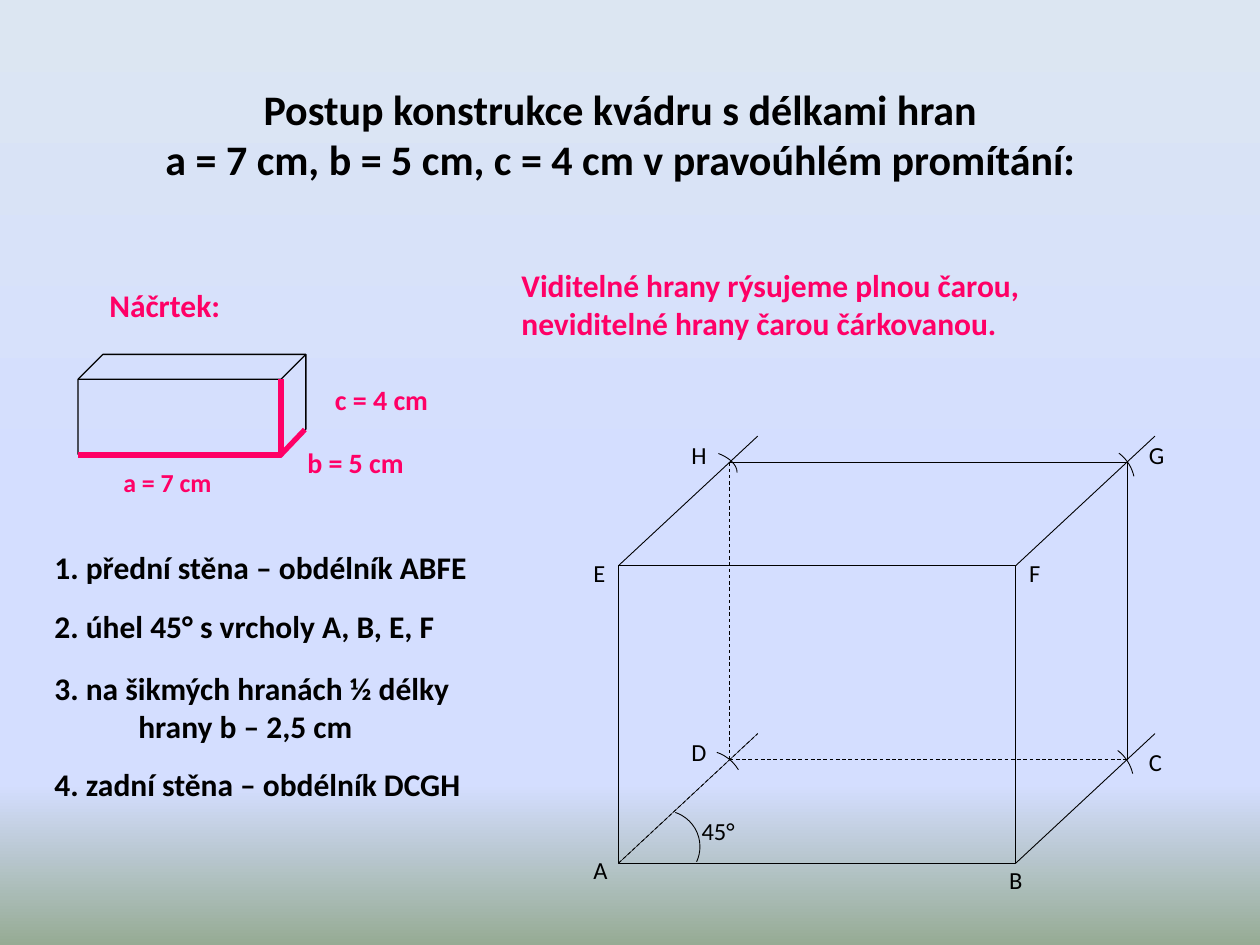
from copy import deepcopy
from pptx import Presentation
from pptx import util as u
from pptx.dml.color import RGBColor
from pptx.enum import dml, shapes, text
from pptx.oxml.ns import qn

Pt = u.Pt
BLACK = RGBColor(0x00, 0x00, 0x00)
PINK = RGBColor(0xFF, 0x00, 0x66)
SKY = RGBColor(0xDC, 0xE6, 0xF2)
LAVENDER = RGBColor(0xD4, 0xDE, 0xFF)
GREEN = RGBColor(0x96, 0xAB, 0x94)

presentation = Presentation()
presentation.slide_width, presentation.slide_height = Pt(720), Pt(540)
slide = presentation.slides.add_slide(presentation.slide_layouts[6])

background = slide.background.fill
background.gradient()
background.gradient_angle = 270
stop_list = slide._element.xpath(".//a:gsLst")[0]
for _ in range(2):
    stop_list.append(deepcopy(stop_list[-1]))
stops = [(0, SKY), (0.53, LAVENDER), (0.83, LAVENDER), (1, GREEN)]
for stop, (position, color) in zip(background.gradient_stops, stops):
    stop.position = position
    stop.color.rgb = color


def add_text(content, left, top, width, height, size, color=BLACK, bold=True):
    box = slide.shapes.add_textbox(Pt(left), Pt(top), Pt(width), Pt(height))
    box.text_frame.word_wrap = True
    box.text_frame.text = content
    for paragraph in box.text_frame.paragraphs:
        for run in paragraph.runs:
            run.font.name = "Calibri"
            run.font.size = Pt(size)
            run.font.bold = bold
            run.font.color.rgb = color
    return box.text_frame


def add_line(x1, y1, x2, y2, width=0.5, color=BLACK, dashed=False):
    line = slide.shapes.add_connector(
        shapes.MSO_CONNECTOR.STRAIGHT, Pt(x1), Pt(y1), Pt(x2), Pt(y2))
    line.line.width = Pt(width)
    line.line.color.rgb = color
    if dashed:
        line.line.dash_style = dml.MSO_LINE.DASH
    properties = line._element.spPr
    properties.append(properties.makeelement(qn("a:effectLst"), {}))


title = add_text("Postup konstrukce kvádru s délkami hran\v"
                 "a = 7 cm, b = 5 cm, c = 4 cm v pravoúhlém promítání:",
                 30.5, 31.5, 648, 90, 24)
title.vertical_anchor = text.MSO_ANCHOR.MIDDLE
title.paragraphs[0].alignment = text.PP_ALIGN.CENTER

steps = [
    ("1. přední stěna – obdélník ABFE", 309.6, 272, 40),
    ("2. úhel 45° s vrcholy A, B, E, F", 343.6, 300, 34),
    ("3. na šikmých hranách ½ délky hrany b – 2,5 cm", 378.7, 272, 57),
    ("4. zadní stěna – obdélník DCGH", 433.6, 262, 42),
]
for content, top, width, height in steps:
    step = add_text(content, 24, top, width, height, 18)
    properties = step.paragraphs[0]._p.get_or_add_pPr()
    properties.set("marL", str(Pt(48)))
    properties.set("indent", str(Pt(-48)))

left, top, width, height = 353.5, 323.2, 227, 170
right, bottom = left + width, top + height
depth_x, depth_y = 63.5, 59
back_left, back_right = left + depth_x, right + depth_x
back_top, back_bottom = top - depth_y, bottom - depth_y
reach_x, reach_y = 79.5, 74

front = slide.shapes.add_shape(
    shapes.MSO_SHAPE.RECTANGLE, Pt(left), Pt(top), Pt(width), Pt(height))
sketch = slide.shapes.add_shape(
    shapes.MSO_SHAPE.CUBE, Pt(44.6), Pt(202.5), Pt(130.2), Pt(57))
sketch.adjustments[0] = 0.25
for shape, weight in [(front, 0.5), (sketch, 0.75)]:
    shape.shadow.inherit = False
    shape.fill.background()
    shape.line.color.rgb = BLACK
    shape.line.width = Pt(weight)

add_line(left, bottom, left + reach_x, bottom - reach_y, dashed=True)
for x, y, weight in [(left, bottom, 0.25), (left, top, 0.5),
                     (right, top, 0.5), (right, bottom, 0.5)]:
    add_line(x, y, x + reach_x, y - reach_y, weight)
add_line(back_left, back_top, back_left, back_bottom, dashed=True)
add_line(back_left, back_bottom, back_right, back_bottom, dashed=True)
add_line(back_left, back_top, back_right, back_top)
add_line(back_right, back_top, back_right, back_bottom)

arcs = [
    (379.4, 483.8, 20.6, 20.6, 288.4, 24.8),
    (402.5, 451.4, 22.6, 22.6, 288.4, 329.3),
    (393.8, 270, 27.4, 13.7, 327, 0),
    (625, 447.1, 22.8, 22.8, 307, 347.3),
    (625.7, 277.2, 22.8, 22.8, 307, 347.3),
]
for x, y, radius_x, radius_y, start, end in arcs:
    arc = slide.shapes.add_shape(
        shapes.MSO_SHAPE.ARC, Pt(x - radius_x), Pt(y - radius_y),
        Pt(2 * radius_x), Pt(2 * radius_y))
    arc.adjustments[0] = start * 0.6
    arc.adjustments[1] = end * 0.6
    arc.shadow.inherit = False
    arc.fill.background()
    arc.line.color.rgb = BLACK
    arc.line.width = Pt(0.5)

vertices = [("A", 332, 485.3), ("B", 569.5, 491), ("C", 649.4, 423.4),
            ("D", 388, 417.6), ("E", 332, 315.4), ("F", 581, 315.4),
            ("G", 649.4, 247.7), ("H", 388, 247.7)]
for letter, x, y in vertices:
    add_text(letter, x, y, 22.3, 22.3, 14, bold=False)
add_text("45°", 393.8, 463, 39.6, 22.3, 14, bold=False)

for edge in [(44.6, 260, 160.6, 260), (160.6, 259.2, 160.6, 216.7),
             (159.8, 260.6, 174.2, 245.5)]:
    add_line(*edge, width=3, color=PINK)

add_text("Náčrtek:", 55.4, 159.8, 90.7, 28, 18, PINK)
for content, x, y, size, spacing in [("a = 7 cm", 63.4, 266.4, 14.8, 0.8),
                                     ("c = 4 cm", 184.3, 217.4, 16, 0.9),
                                     ("b = 5 cm", 168.5, 253.4, 16, 0.9)]:
    label = add_text(content, x, y, 85, 23, size, PINK)
    label.paragraphs[0].line_spacing = spacing
add_text("Viditelné hrany rýsujeme plnou čarou,\n"
         "neviditelné hrany čarou čárkovanou.", 290.9, 148.3, 360, 51, 18, PINK)

presentation.save("out.pptx")
